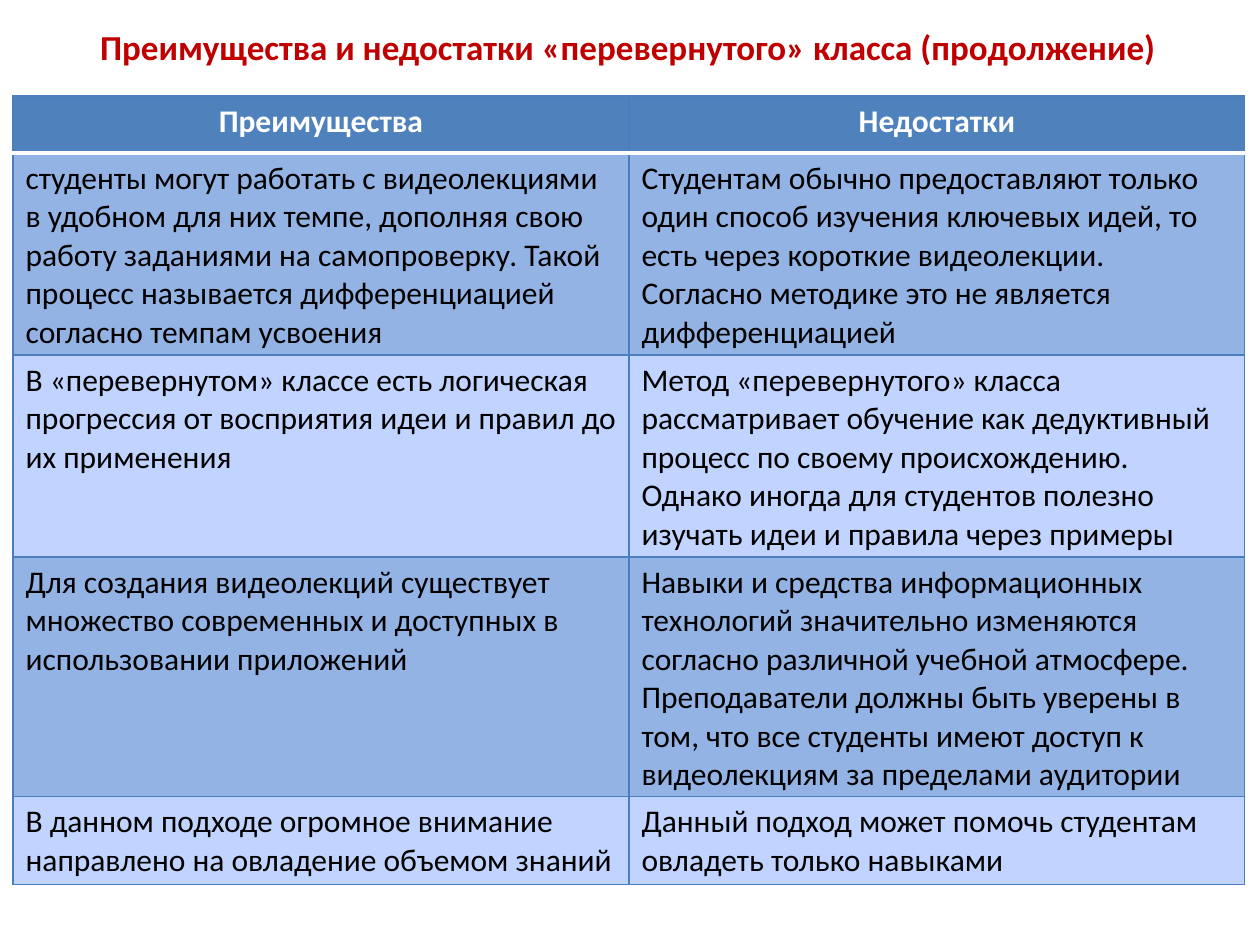
import pptx
import pptx.util
import pptx.dml.color
import pptx.enum.text
import pptx.oxml

TITLE = "Преимущества и недостатки «перевернутого» класса (продолжение)"
ROWS = [
    ("Преимущества", "Недостатки"),
    ("студенты могут работать с видеолекциями в удобном для них темпе, дополняя свою работу заданиями на самопроверку. Такой процесс называется дифференциацией согласно темпам усвоения",
     "Студентам обычно предоставляют только один способ изучения ключевых идей, то есть через короткие видеолекции. Согласно методике это не является дифференциацией"),
    ("В «перевернутом» классе есть логическая прогрессия от восприятия идеи и правил до их применения",
     "Метод «перевернутого» класса рассматривает обучение как дедуктивный процесс по своему происхождению. Однако иногда для студентов полезно изучать идеи и правила через примеры"),
    ("Для создания видеолекций существует множество современных и доступных в использовании приложений",
     "Навыки и средства информационных технологий значительно изменяются согласно различной учебной атмосфере. Преподаватели должны быть уверены в том, что все студенты имеют доступ к видеолекциям за пределами аудитории"),
    ("В данном подходе огромное внимание направлено на овладение объемом знаний",
     "Данный подход может помочь студентам овладеть только навыками"),
]
HEIGHTS = [57, 202, 202, 239, 88]
HEAD, BANDS = "4F81BD", ("C0D4FF", "93B3E4")
EDGE, RULE = ("4B7EBC", 0.75), ("FFFFFF", 2)
CENTER = pptx.enum.text.PP_ALIGN.CENTER
LEFT = pptx.enum.text.PP_ALIGN.LEFT


def px(n):
    return pptx.util.Emu(round(n * 914400 / 126))


def paint(color, code):
    color.rgb = pptx.dml.color.RGBColor.from_string(code)


def write(frame, text, size, code, bold, align):
    frame.word_wrap = True
    para = frame.paragraphs[0]
    para.alignment = align
    run = para.add_run()
    run.text = text
    run.font.name = "Calibri"
    run.font.size = pptx.util.Pt(size)
    run.font.bold = bold
    paint(run.font.color, code)


def border(cell, sides):
    props = cell._tc.get_or_add_tcPr()
    for spot, (side, (code, width)) in enumerate(sides.items()):
        line = pptx.oxml.parse_xml(
            '<a:ln%s xmlns:a="http://schemas.openxmlformats.org/drawingml/2006/main" w="%d">'
            '<a:solidFill><a:srgbClr val="%s"/></a:solidFill></a:ln%s>'
            % (side, pptx.util.Pt(width), code, side))
        props.insert(spot, line)


def main():
    deck = pptx.Presentation()
    deck.slide_width, deck.slide_height = px(1260), px(945)
    slide = deck.slides.add_slide(deck.slide_layouts[6])

    title = slide.shapes.add_textbox(px(25), px(19), px(1206), px(55))
    write(title.text_frame, TITLE, 20, "C00000", True, CENTER)

    table = slide.shapes.add_table(
        len(ROWS), 2, px(13), px(96), px(1232), px(sum(HEIGHTS))).table
    for r, texts in enumerate(ROWS):
        table.rows[r].height = px(HEIGHTS[r])
        head = r == 0
        for c, text in enumerate(texts):
            cell = table.cell(r, c)
            cell.fill.solid()
            paint(cell.fill.fore_color, HEAD if head else BANDS[r % 2])
            write(cell.text_frame, text, 18, "FFFFFF" if head else "000000",
                  head, CENTER if head else LEFT)
            border(cell, {"L": EDGE, "R": EDGE,
                          "T": RULE if r == 1 else EDGE,
                          "B": RULE if head else EDGE})

    deck.save("out.pptx")


if __name__ == "__main__":
    main()
